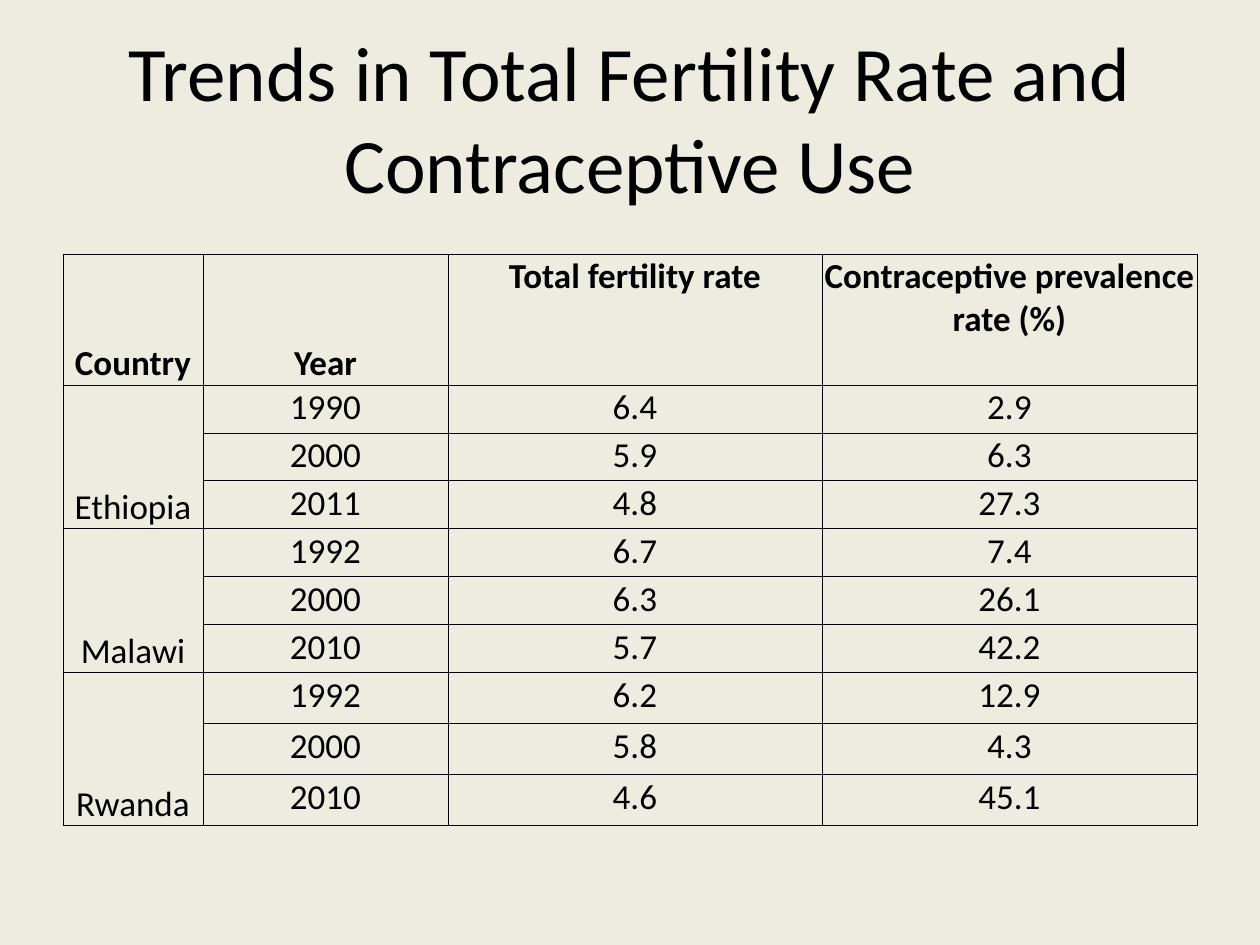
from dataclasses import dataclass

from lxml import etree
from pptx import Presentation
from pptx.dml.color import RGBColor
from pptx.enum import text
from pptx.oxml import ns
from pptx import util as u

EMU_PER_PX = 914400 / 126
FONT = "Calibri"
BACKGROUND = RGBColor(0xEE, 0xEC, 0xE1)
INK = RGBColor(0x00, 0x00, 0x00)

COLUMN_WIDTHS = [140, 245, 374, 375]
ROW_HEIGHTS = [131] + [48] * 6 + [51] * 3
HEADINGS = ["Country", "Year", "Total fertility rate", "Contraceptive prevalence rate (%)"]


@dataclass
class Country:
    name: str
    surveys: list[tuple[str, str, str]]  # year, fertility rate, prevalence


COUNTRIES = [
    Country("Ethiopia", [("1990", "6.4", "2.9"), ("2000", "5.9", "6.3"), ("2011", "4.8", "27.3")]),
    Country("Malawi", [("1992", "6.7", "7.4"), ("2000", "6.3", "26.1"), ("2010", "5.7", "42.2")]),
    Country("Rwanda", [("1992", "6.2", "12.9"), ("2000", "5.8", "4.3"), ("2010", "4.6", "45.1")]),
]


def px(length: int) -> u.Emu:
    return u.Emu(round(length * EMU_PER_PX))


def format_text(frame, size: int, bold: bool = False) -> None:
    for para in frame.paragraphs:
        para.alignment = text.PP_ALIGN.CENTER
        for span in para.runs:
            span.font.name = FONT
            span.font.size = u.Pt(size)
            span.font.bold = bold
            span.font.color.rgb = INK


def add_borders(cell) -> None:
    properties = cell._tc.get_or_add_tcPr()
    for side in ("lnL", "lnR", "lnT", "lnB"):
        line = etree.SubElement(properties, ns.qn(f"a:{side}"), w=str(u.Pt(0.5)))
        fill = etree.SubElement(line, ns.qn("a:solidFill"))
        etree.SubElement(fill, ns.qn("a:srgbClr"), val=str(INK))


def style_cell(cell, bold: bool, bottom: bool) -> None:
    cell.margin_left = cell.margin_right = cell.margin_top = px(1)
    cell.margin_bottom = 0
    cell.vertical_anchor = text.MSO_ANCHOR.BOTTOM if bottom else text.MSO_ANCHOR.TOP
    add_borders(cell)
    cell.fill.background()
    format_text(cell.text_frame, 20, bold)


def add_title(page, wording: str) -> None:
    box = page.shapes.title
    box.left, box.top, box.width, box.height = px(63), px(38), px(1134), px(157)
    frame = box.text_frame
    frame.text = wording
    frame.word_wrap = True
    frame.auto_size = text.MSO_AUTO_SIZE.NONE
    frame.vertical_anchor = text.MSO_ANCHOR.MIDDLE
    format_text(frame, 44)


def add_trend_table(page) -> None:
    table = page.shapes.add_table(
        len(ROW_HEIGHTS), len(COLUMN_WIDTHS),
        px(63), px(254), px(sum(COLUMN_WIDTHS)), px(sum(ROW_HEIGHTS)),
    ).table
    table.first_row = table.horz_banding = False
    for column, width in zip(table.columns, COLUMN_WIDTHS):
        column.width = px(width)
    for row, height in zip(table.rows, ROW_HEIGHTS):
        row.height = px(height)

    # Wording: headings, then one merged country cell per group of surveys
    for index, heading in enumerate(HEADINGS):
        table.cell(0, index).text = heading
    first = 1
    for country in COUNTRIES:
        last = first + len(country.surveys) - 1
        table.cell(first, 0).merge(table.cell(last, 0))
        table.cell(first, 0).text = country.name
        for row, survey in enumerate(country.surveys, first):
            for column, value in enumerate(survey, 1):
                table.cell(row, column).text = value
        first = last + 1

    # Country names and the first two headings sit at the cell bottom
    for row in range(len(ROW_HEIGHTS)):
        for column in range(len(COLUMN_WIDTHS)):
            heading = row == 0
            bottom = column == 0 or (heading and column == 1)
            style_cell(table.cell(row, column), heading, bottom)


def main() -> None:
    deck = Presentation()
    deck.slide_width, deck.slide_height = px(1260), px(945)
    page = deck.slides.add_slide(deck.slide_layouts.get_by_name("Title Only"))
    page.background.fill.solid()
    page.background.fill.fore_color.rgb = BACKGROUND
    add_title(page, "Trends in Total Fertility Rate and Contraceptive Use")
    add_trend_table(page)
    deck.save("out.pptx")


if __name__ == "__main__":
    main()
